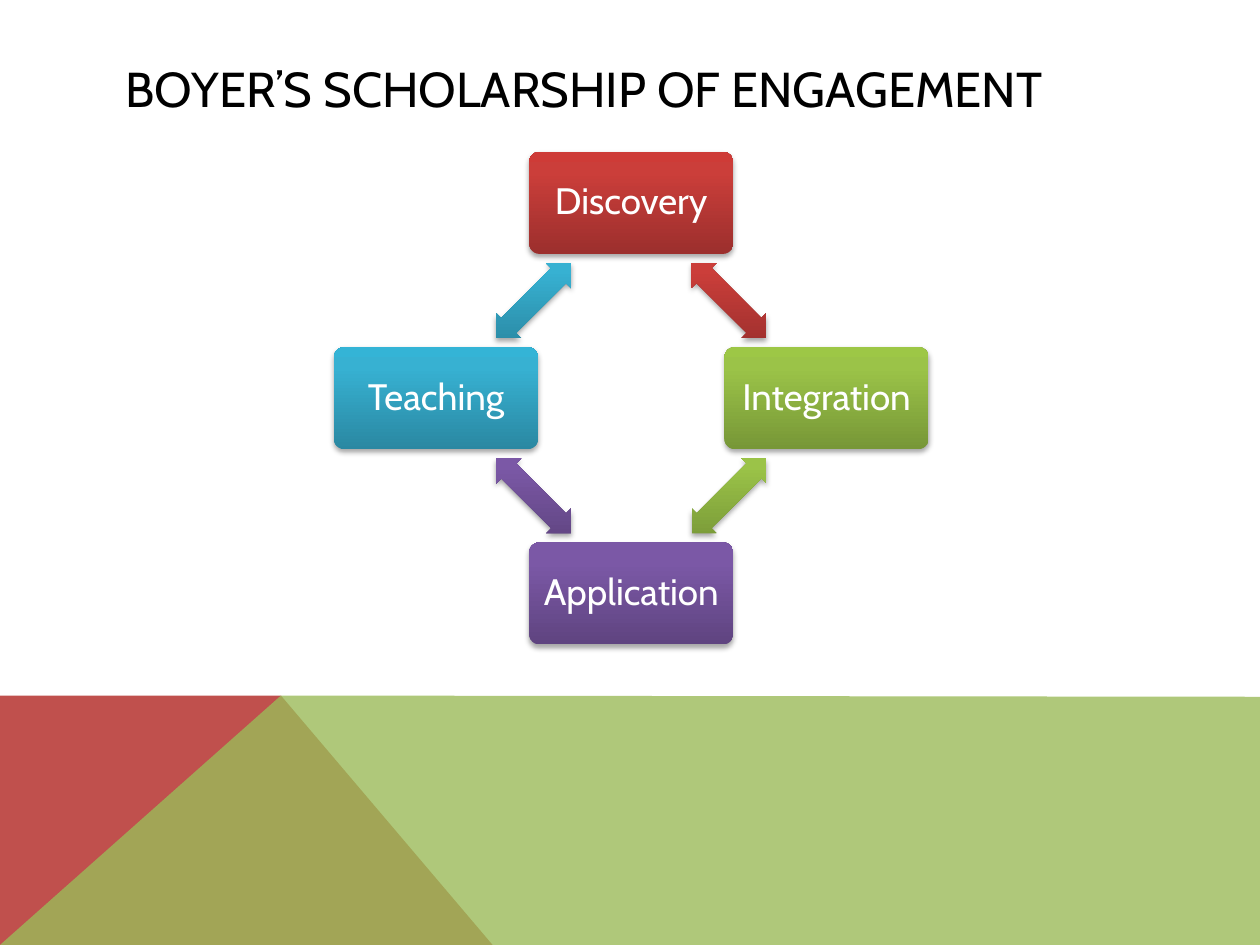
from lxml.etree import SubElement
from pptx import Presentation
from pptx.dml.color import RGBColor
from pptx.enum.shapes import MSO_SHAPE
from pptx.enum.text import MSO_ANCHOR, PP_ALIGN
from pptx.oxml.ns import qn
from pptx.util import Inches, Pt

COLORS = {
    "black": "000000",
    "white": "FFFFFF",
    "band_red": "C0504D",
    "band_green": "9BBB59",
    "red": ("9C2F2D", "CB3E3A", "CE3B37"),
    "green": ("779737", "9BC348", "9DC746"),
    "purple": ("5F4480", "7B58A6", "7C57A8"),
    "blue": ("2A88A2", "37B1D2", "34B4D6"),
}


def write_text(shape, text, size, color, align=PP_ALIGN.LEFT, spacing=1.0, inset=0.1, wrap=True):
    frame = shape.text_frame
    frame.word_wrap = wrap
    frame.vertical_anchor = MSO_ANCHOR.MIDDLE
    frame.margin_left = frame.margin_right = Inches(inset)
    frame.margin_top = frame.margin_bottom = Inches(inset / 2)
    para = frame.paragraphs[0]
    para.alignment = align
    para.line_spacing = spacing
    span = para.add_run()
    span.text = text
    span.font.name = "Cabin"
    span.font.size = Pt(size)
    span.font.color.rgb = RGBColor.from_string(COLORS[color])


def add_glossy_shape(kind, center_x, center_y, width, height, color):
    shape = page.shapes.add_shape(
        kind, Inches(center_x - width / 2), Inches(center_y - height / 2), Inches(width), Inches(height)
    )
    shape.line.fill.background()
    shape.fill.gradient()
    gradient = shape.fill._fill._gradFill
    gradient.set("rotWithShape", "0")
    stops = gradient.find(qn("a:gsLst"))
    for stop in list(stops):
        stops.remove(stop)
    for position, tone in zip((0, 80000, 100000), COLORS[color]):
        stop = SubElement(stops, qn("a:gs"), pos=str(position))
        SubElement(stop, qn("a:srgbClr"), val=tone)
    gradient.find(qn("a:lin")).set("ang", str(270 * 60000))
    shape.shadow.inherit = False
    effects = shape._element.spPr.find(qn("a:effectLst"))
    shadow = SubElement(
        effects, qn("a:outerShdw"), blurRad=str(Pt(3.1)), dist=str(Pt(1.8)), dir=str(90 * 60000), rotWithShape="0"
    )
    shadow_color = SubElement(shadow, qn("a:srgbClr"), val=COLORS["black"])
    SubElement(shadow_color, qn("a:alpha"), val="35000")
    return shape


deck = Presentation()
deck.slide_width = Inches(10)
deck.slide_height = Inches(7.5)
page = deck.slides.add_slide(deck.slide_layouts[6])

bands = [
    ("band_red", 100, [(0, 7.5), (0, 5.52), (2.23, 5.52), (3.91, 7.5)]),
    ("band_green", 80, [(0, 7.5), (2.23, 5.52), (10, 5.53), (10, 7.5)]),
]
for color, opacity, points in bands:
    corners = [(Inches(x), Inches(y)) for x, y in points]
    builder = page.shapes.build_freeform(*corners[0])
    builder.add_line_segments(corners[1:], close=True)
    band = builder.convert_to_shape()
    band.fill.solid()
    band.fill.fore_color.rgb = RGBColor.from_string(COLORS[color])
    band.line.fill.background()
    band.shadow.inherit = False
    if opacity < 100:
        fill_color = band._element.spPr.find(qn("a:solidFill")).find(qn("a:srgbClr"))
        SubElement(fill_color, qn("a:alpha"), val=str(opacity * 1000))

title = page.shapes.add_textbox(Inches(0.9), Inches(0.4), Inches(8.22), Inches(0.6))
write_text(title, "BOYER’S SCHOLARSHIP OF ENGAGEMENT", size=28, color="black")

CENTER_X, CENTER_Y, RADIUS = 5.01, 3.16, 1.55
steps = [
    ("Discovery", "red", 0, -1),
    ("Integration", "green", 1, 0),
    ("Application", "purple", 0, 1),
    ("Teaching", "blue", -1, 0),
]
for index, (label, color, across, down) in enumerate(steps):
    next_across, next_down = steps[(index + 1) % len(steps)][2:]
    box = add_glossy_shape(
        MSO_SHAPE.ROUNDED_RECTANGLE, CENTER_X + RADIUS * across, CENTER_Y + RADIUS * down, 1.62, 0.81, color
    )
    box.adjustments[0] = 0.1
    write_text(box, label, size=21, color="white", align=PP_ALIGN.CENTER, spacing=0.9, inset=0.09, wrap=False)
    arrow = add_glossy_shape(
        MSO_SHAPE.LEFT_RIGHT_ARROW,
        CENTER_X + RADIUS * (across + next_across) / 2,
        CENTER_Y + RADIUS * (down + next_down) / 2,
        0.84,
        0.28,
        color,
    )
    arrow.adjustments[0] = 0.6
    arrow.adjustments[1] = 0.5
    arrow.rotation = 45 + 90 * index

deck.save("out.pptx")
